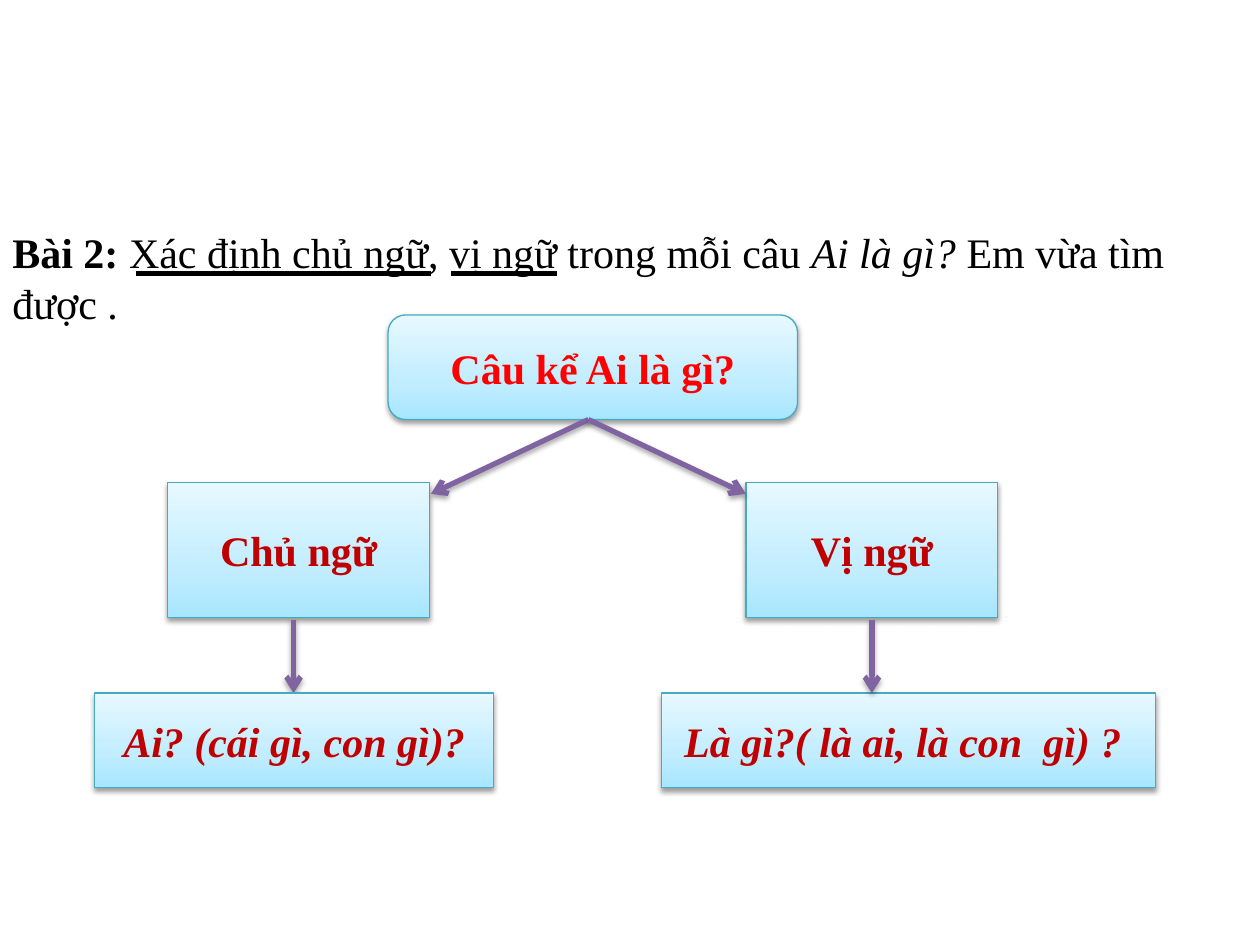
from copy import deepcopy

from lxml.etree import SubElement as Sub
from pptx import Presentation
from pptx.dml.color import RGBColor as Rgb
from pptx.enum.shapes import MSO_CONNECTOR as Link, MSO_SHAPE as Kind
from pptx.enum.text import MSO_ANCHOR as Anchor, MSO_AUTO_SIZE as Fit, PP_ALIGN as Align
from pptx.oxml.ns import qn
from pptx.util import Inches, Pt

BASE = {"name": "Times New Roman", "size": Pt(24)}
BOLD = {**BASE, "bold": True}
SLANT = {**BOLD, "italic": True}
STOPS = [(0, "A7E6FF"), (0.35, "C1EDFF"), (1, "E7F8FF")]
RED, DARK, BLACK, PLUM, TEAL = "FF0000", "C00000", "000000", "8064A2", "46AAC5"


def tint(color, code):
    """Give a colour object a hex value."""
    color.rgb = Rgb.from_string(code)


def style(item, look):
    """Set each format value on an object."""
    for key, value in look.items():
        setattr(item, key, value)


def write(para, text, look, code):
    """Add a styled run to a paragraph."""
    run = para.add_run()
    run.text = text
    style(run.font, look)
    tint(run.font.color, code)


def shade(shape, alpha=0, dist=0):
    """Set a soft shadow below a shape, or none when alpha is zero."""
    root = Sub(shape._element.spPr, qn("a:effectLst"))
    if alpha:
        drop = Sub(root, qn("a:outerShdw"), blurRad=str(Pt(3.1)), dist=str(Pt(dist)),
                   dir="5400000", rotWithShape="0")
        color = Sub(drop, qn("a:srgbClr"), val=BLACK)
        Sub(color, qn("a:alpha"), val=str(alpha * 1000))


def blend(shape):
    """Fill a shape with the upward blue gradient."""
    fill = shape.fill
    fill.gradient()
    fill.gradient_angle = 90
    stops = shape._element.spPr.find(qn("a:gradFill")).find(qn("a:gsLst"))
    stops.append(deepcopy(stops[0]))
    for stop, (place, code) in zip(fill.gradient_stops, STOPS):
        stop.position = place
        tint(stop.color, code)


def box(slide, area, text, look=BOLD, code=DARK, kind=Kind.RECTANGLE, align=Align.CENTER):
    """Add a gradient box with one line of text."""
    shape = slide.shapes.add_shape(kind, *map(Inches, area))
    blend(shape)
    tint(shape.line.color, TEAL)
    shape.line.width = Pt(0.75)
    shade(shape, 38, 1.6)
    frame = shape.text_frame
    style(frame, {"word_wrap": True, "vertical_anchor": Anchor.MIDDLE})
    para = frame.paragraphs[0]
    para.alignment = align
    write(para, text, look, code)
    return shape


def rule(slide, ends, code=BLACK):
    """Add a thick straight line."""
    line = slide.shapes.add_connector(Link.STRAIGHT, *map(Inches, ends))
    tint(line.line.color, code)
    line.line.width = Pt(3)
    return line


def arrow(slide, ends):
    """Add a shadowed line with an open arrowhead."""
    line = rule(slide, ends, PLUM)
    Sub(line.line._get_or_add_ln(), qn("a:tailEnd"), type="arrow")
    shade(line, 35, 1.8)


def task(slide):
    """Add the exercise text."""
    area = slide.shapes.add_textbox(*map(Inches, (0, 1.75, 9.83, 0.91)))
    frame = area.text_frame
    style(frame, {"word_wrap": True, "auto_size": Fit.SHAPE_TO_FIT_TEXT})
    for text, look in [
        ("Bài 2: ", BOLD),
        ("Xác định chủ ngữ, vị ngữ trong mỗi câu ", BASE),
        ("Ai là gì? ", {**BASE, "italic": True}),
        ("Em vừa tìm được .", BASE),
    ]:
        write(frame.paragraphs[0], text, look, BLACK)


def main():
    """Build the slide and save it."""
    deck = Presentation()
    style(deck, {"slide_width": Inches(10), "slide_height": Inches(7.5)})
    slide = deck.slides.add_slide(deck.slide_layouts[6])
    task(slide)
    box(slide, (1.33, 3.83, 2.08, 1.07), "Chủ ngữ")
    box(slide, (3.08, 2.5, 3.25, 0.83), "Câu kể Ai là gì?", code=RED,
        kind=Kind.ROUNDED_RECTANGLE)
    box(slide, (5.92, 3.83, 2, 1.07), "Vị ngữ")
    reply = box(slide, (5.25, 5.5, 3.92, 0.75), "Là gì?( là ai, là con  gì) ?", SLANT,
                align=Align.LEFT)
    reply.text_frame.margin_left = Inches(0.18)
    for end in (3.42, 5.92):
        arrow(slide, (4.67, 3.33, end, 3.92))
    for mid in (2.33, 6.92):
        arrow(slide, (mid, 4.92, mid, 5.5))
    box(slide, (0.75, 5.5, 3.17, 0.75), "Ai? (cái gì, con gì)?", SLANT)
    for left, right in [(1.08, 3.42), (3.58, 4.42)]:
        shade(rule(slide, (left, 2.17, right, 2.17)))
    deck.save("out.pptx")


if __name__ == "__main__":
    main()
